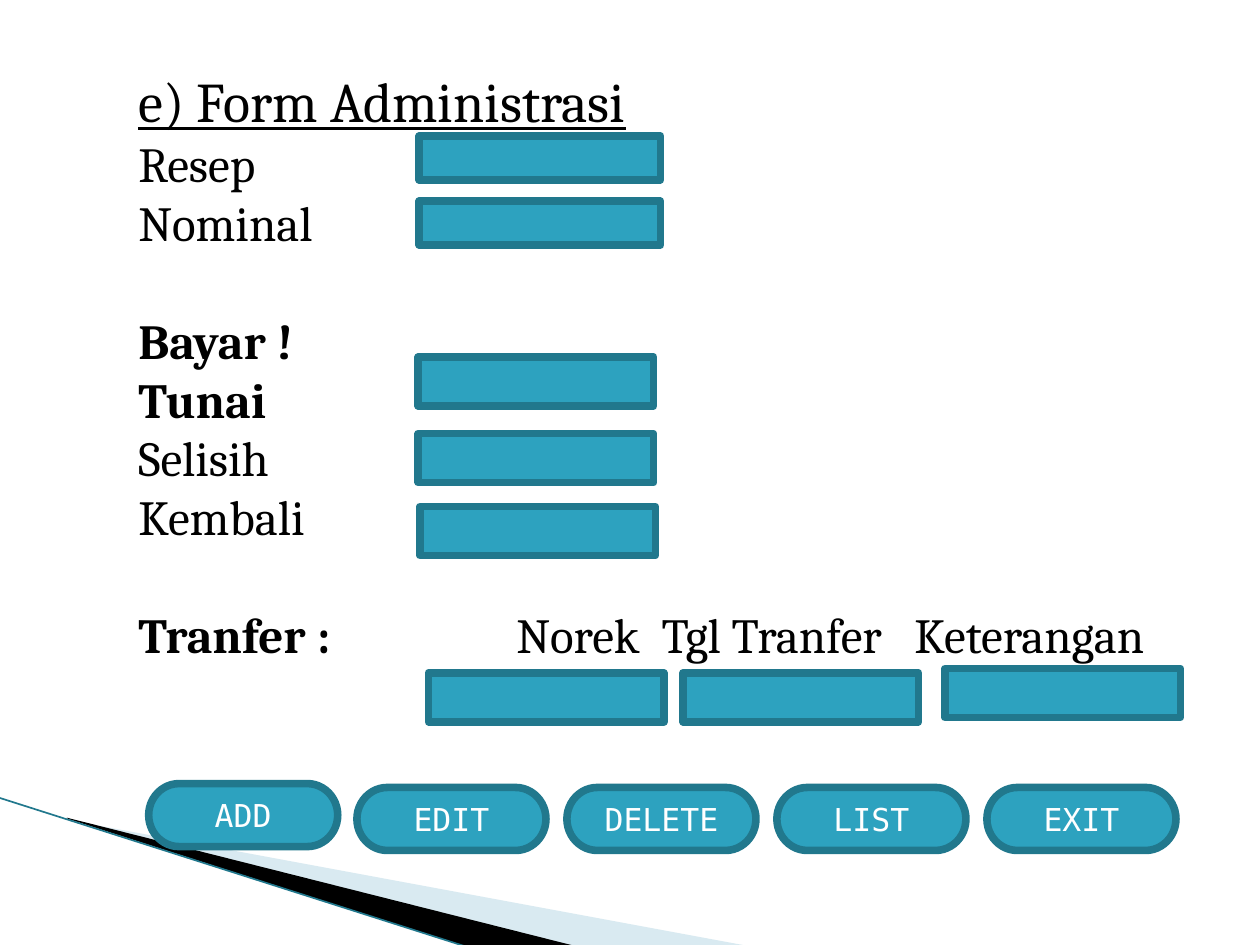
from lxml import etree
from pptx import Presentation
from pptx import util as u
from pptx.dml.color import RGBColor
from pptx.enum import shapes, text
from pptx.oxml.ns import qn

Pt = u.Pt


def rgb(value):
    return RGBColor.from_string(value)


class FormSlide:
    TEAL, EDGE, BLACK, WHITE = "2DA2BF", "21788D", "000000", "FFFFFF"
    BODY, LABEL = "Cambria", "DejaVu Sans Mono"
    BORDER = 4.33

    def __init__(self, prs):
        self.s = prs.slides.add_slide(prs.slide_layouts[6])

    def run(self, p, content, color, **fmt):
        r = p.add_run()
        r.text = content
        for name, value in fmt.items():
            setattr(r.font, name, value)
        r.font.color.rgb = rgb(color)

    def shape(self, kind, x, y, w, h):
        sp = self.s.shapes.add_shape(kind, Pt(x), Pt(y), Pt(w), Pt(h))
        sp.shadow.inherit = False
        sp.fill.solid()
        sp.fill.fore_color.rgb = rgb(self.TEAL)
        sp.line.color.rgb = rgb(self.EDGE)
        sp.line.width = Pt(self.BORDER)
        return sp

    def field(self, x, y, w, h):
        self.shape(shapes.MSO_SHAPE.RECTANGLE, x, y, w, h)

    def button(self, label, x, y):
        sp = self.shape(shapes.MSO_SHAPE.FLOWCHART_TERMINATOR, x, y, 108, 36)
        tf = sp.text_frame
        tf.word_wrap = False
        tf.vertical_anchor = text.MSO_ANCHOR.MIDDLE
        p = tf.paragraphs[0]
        p.alignment = text.PP_ALIGN.CENTER
        self.run(p, label, self.WHITE, name=self.LABEL, size=Pt(18))

    def wedge(self, points, color, alpha=None):
        """Fill a closed outline; alpha is its opacity in percent."""
        points = [(Pt(x), Pt(y)) for x, y in points]
        fb = self.s.shapes.build_freeform(*points[0])
        fb.add_line_segments(points[1:])
        sp = fb.convert_to_shape()
        sp.shadow.inherit = False
        sp.fill.solid()
        sp.fill.fore_color.rgb = rgb(color)
        sp.line.fill.background()
        if alpha:
            clr = sp.fill._xPr.find(qn("a:solidFill"))[0]
            etree.SubElement(clr, qn("a:alpha"), val=str(alpha * 1000))

    def line(self, x1, y1, x2, y2):
        c = self.s.shapes.add_connector(
            shapes.MSO_CONNECTOR.STRAIGHT, Pt(x1), Pt(y1), Pt(x2), Pt(y2))
        c.line.color.rgb = rgb(self.EDGE)
        c.line.width = Pt(0.95)
        etree.SubElement(c._element.spPr, qn("a:effectLst"))

    def body(self, x, y, w, h, rows, tabs):
        """Rows are (space before, format, list of (text, bold))."""
        tf = self.s.shapes.add_textbox(Pt(x), Pt(y), Pt(w), Pt(h)).text_frame
        tf.word_wrap = True
        for i, (gap, fmt, runs) in enumerate(rows):
            p = tf.add_paragraph() if i else tf.paragraphs[0]
            if gap:
                p.space_before = Pt(gap)
            if len(runs) > 1:
                tab_list = etree.SubElement(p._p.get_or_add_pPr(), qn("a:tabLst"))
                for pos in tabs:
                    etree.SubElement(tab_list, qn("a:tab"), pos=str(Pt(pos)), algn="l")
            for content, bold in runs:
                self.run(p, content, self.BLACK, name=self.BODY, bold=bold, **fmt)


def main():
    prs = Presentation()
    prs.slide_width, prs.slide_height = Pt(720), Pt(540)
    form = FormSlide(prs)

    form.wedge([(39.6, 468.7), (428.4, 540.7), (328.3, 540.7), (39.6, 468)],
               "A0CBDC", alpha=40)
    form.wedge([(38.2, 467.3), (329, 540.7), (267.8, 541.4), (38.9, 468)], form.BLACK)
    form.line(-0.7, 455.8, 267.8, 541.4)

    title, normal, blank_line = dict(size=Pt(32), underline=True), dict(size=Pt(28)), 33.6
    form.body(72, 34.5, 612, 463, [
        (0, title, [("e) Form Administrasi", False)]),
        (0, normal, [("Resep", False)]),
        (0, normal, [("Nominal", False)]),
        (blank_line, normal, [("Bayar !", True)]),
        (0, normal, [("Tunai", True)]),
        (0, normal, [("Selisih", False)]),
        (0, normal, [("Kembali", False)]),
        (blank_line, normal, [("Tranfer :", True),
                              ("\tNorek\tTgl Tranfer\tKeterangan", False)]),
    ], tabs=(216, 299, 443.5))

    for y in (77.8, 115):
        form.field(239.5, y, 138, 25)
    for x, y in ((239, 204), (239, 247.8), (240, 289.5),
                 (244.8, 384.5), (390.3, 384.5), (540, 382)):
        form.field(x, y, 134.5, 28)

    form.button("ADD", 85, 447.8)
    for i, label in enumerate(("EDIT", "DELETE", "LIST", "EXIT")):
        form.button(label, 204 + 120 * i, 450)

    prs.save("out.pptx")


if __name__ == "__main__":
    main()
